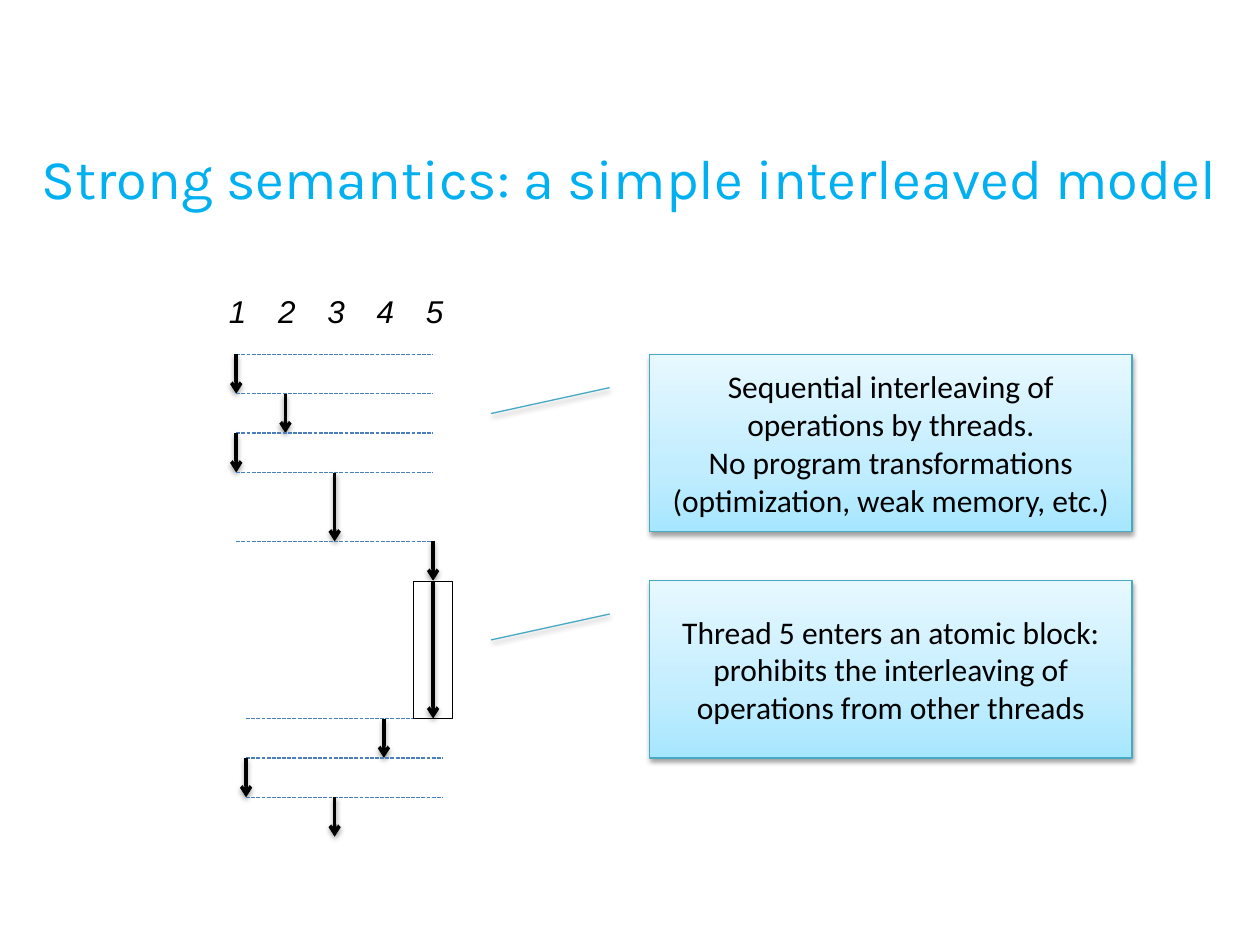
from lxml import etree
from pptx import Presentation
from pptx.dml.color import RGBColor
from pptx.enum.dml import MSO_LINE
from pptx.enum.shapes import MSO_CONNECTOR, MSO_SHAPE
from pptx.enum.text import MSO_ANCHOR, PP_ALIGN
from pptx.oxml.ns import qn
from pptx.util import Inches, Pt

STRAIGHT = MSO_CONNECTOR.STRAIGHT
RECT, CALLOUT = MSO_SHAPE.RECTANGLE, MSO_SHAPE.LINE_CALLOUT_1
DASH = MSO_LINE.SQUARE_DOT
MIDDLE, CENTER, LEFT = MSO_ANCHOR.MIDDLE, PP_ALIGN.CENTER, PP_ALIGN.LEFT

TITLE = "Strong semantics: a simple interleaved model"
THREADS = ["1", "2", "3", "4", "5"]
CALLOUTS = [
    (36, ["Sequential interleaving of operations by threads.",
          "No program transformations (optimization, weak memory, etc.)"]),
    (59, ["Thread 5 enters an atomic block: prohibits the interleaving of "
          "operations from other threads"]),
]
# thread, duration, left edge of the guide (None for the atomic block)
EVENTS = [(1, 4, 24), (2, 4, 24), (1, 4, 24), (3, 7, 24), (5, 4, 24),
          (5, 14, None), (4, 4, 25), (1, 4, 25), (3, 4, 25)]
THEME = {
    "title": ("Karla", 32, "00B0F0"),
    "label": ("Arial", 18, "000000"),
    "body": ("Calibri", 18, "000000"),
    "ink": "000000",
    "paper": "FFFFFF",
    "guide": "4B7EBC",
    "edge": "46AAC5",
    "gradient": [(0, "A7E6FF"), (35, "C1EDFF"), (100, "E7F8FF")],
}
GRID = 128
START, FIRST_X, PITCH, GUIDE_W = 36, 24, 5, 20


def u(n):
    return Inches(10 * n / GRID)


def rgb(value):
    return RGBColor.from_string(value)


def write(p, text, style, align=LEFT, italic=None):
    p.alignment = align
    r = p.add_run()
    r.text = text
    name, size, color = THEME[style]
    r.font.name, r.font.size, r.font.italic = name, Pt(size), italic
    r.font.color.rgb = rgb(color)


def set_line(s, color, width):
    s.line.color.rgb = rgb(color)
    s.line.width = Pt(width)


def set_effect(s, shadow):
    effects = etree.SubElement(s._element.spPr, qn("a:effectLst"))
    if shadow:
        outer = etree.SubElement(effects, qn("a:outerShdw"), blurRad=str(Pt(3.1)),
                                 dist=str(Pt(1.6)), dir="5400000", rotWithShape="0")
        color = etree.SubElement(outer, qn("a:srgbClr"), val=THEME["ink"])
        etree.SubElement(color, qn("a:alpha"), val="38000")


def add_line(shapes, x1, y1, x2, y2, color, width, shadow=False):
    s = shapes.add_connector(STRAIGHT, u(x1), u(y1), u(x2), u(y2))
    set_line(s, color, width)
    set_effect(s, shadow)
    return s


def add_arrow(shapes, x, top, bottom):
    s = add_line(shapes, x, top, x, bottom, THEME["ink"], 2, True)
    etree.SubElement(s.line._get_or_add_ln(), qn("a:tailEnd"), type="arrow")


def add_callout(shapes, top, lines):
    s = shapes.add_shape(CALLOUT, u(66), u(top), u(49), u(18))
    for i, value in enumerate([0.188, -0.083, 0.334, -0.329]):
        s.adjustments[i] = value
    s.fill.gradient()
    s.fill.gradient_angle = 90
    stops = s._element.spPr.find(".//" + qn("a:gsLst"))
    for old in list(stops):
        stops.remove(old)
    for pos, color in THEME["gradient"]:
        stop = etree.SubElement(stops, qn("a:gs"), pos=str(pos * 1000))
        etree.SubElement(stop, qn("a:srgbClr"), val=color)
    set_line(s, THEME["edge"], 0.75)
    set_effect(s, True)
    tf = s.text_frame
    tf.word_wrap, tf.vertical_anchor = True, MIDDLE
    for i, text in enumerate(lines):
        p = tf.add_paragraph() if i else tf.paragraphs[0]
        write(p, text, "body", CENTER)


def main():
    prs = Presentation()
    prs.slide_width, prs.slide_height = Inches(10), Inches(7.5)
    slide = prs.slides.add_slide(prs.slide_layouts[5])
    shapes = slide.shapes

    title = shapes.title
    title.left, title.top, title.width, title.height = u(0), u(10), u(128), u(16)
    title.text_frame.vertical_anchor = MIDDLE
    write(title.text_frame.paragraphs[0], TITLE, "title", CENTER)

    for i, name in enumerate(THREADS):
        s = shapes.add_textbox(u(22 + PITCH * i), u(29), u(9), Inches(0.4))
        s.text_frame.word_wrap = True
        write(s.text_frame.paragraphs[0], name, "label", italic=True)

    top = START
    for thread, duration, left in EVENTS:
        x = FIRST_X + PITCH * (thread - 1)
        if thread == 1:
            x = left
        if left is None:
            block = (x, top, duration)
        else:
            guide = add_line(shapes, left, top, left + GUIDE_W, top, THEME["guide"], 0.75)
            guide.line.dash_style = DASH
            add_arrow(shapes, x, top, top + duration)
        top += duration

    x, top, duration = block
    s = shapes.add_shape(RECT, u(x - 2), u(top), u(4), u(duration))
    s.shadow.inherit = False
    s.fill.solid()
    s.fill.fore_color.rgb = rgb(THEME["paper"])
    set_line(s, THEME["ink"], 0.25)
    add_arrow(shapes, x, top, top + duration)

    for top, lines in CALLOUTS:
        add_callout(shapes, top, lines)

    prs.save("out.pptx")


if __name__ == "__main__":
    main()
